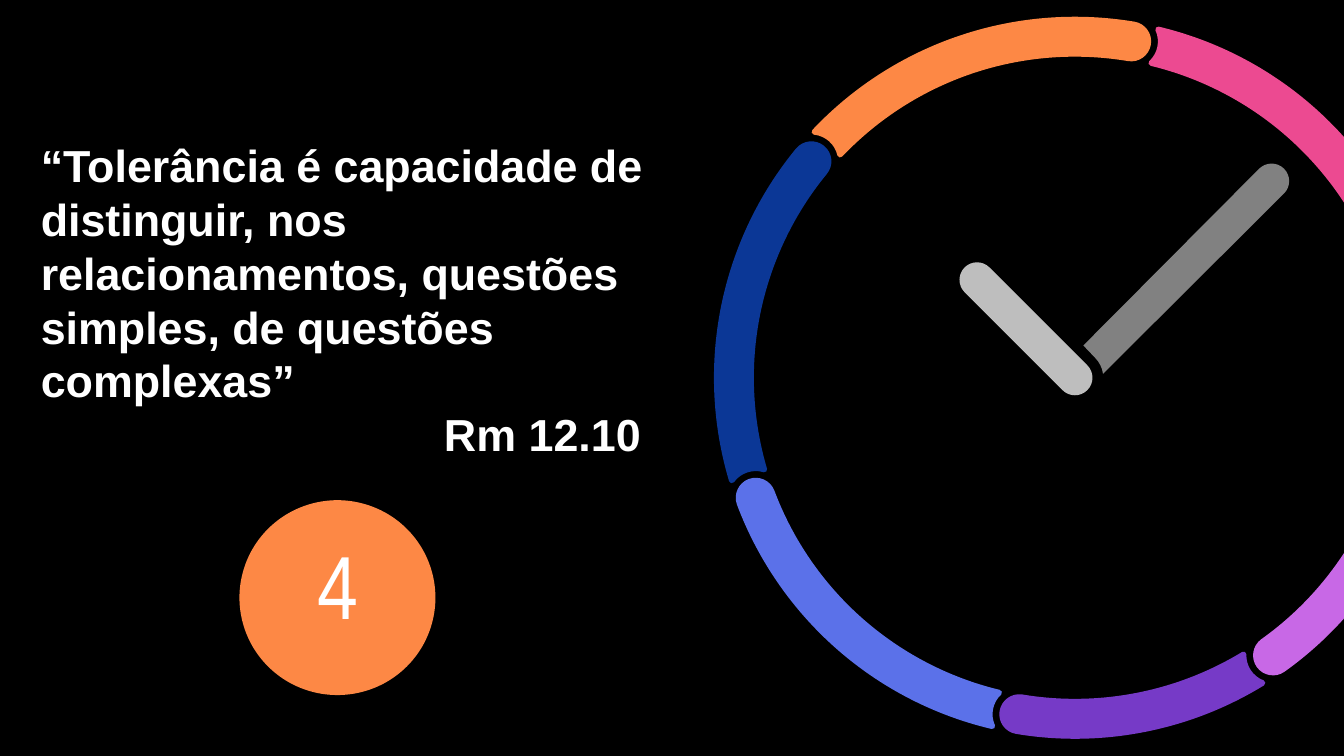
from dataclasses import dataclass
from math import acos, atan2, cos, degrees, hypot, radians, sin, tan

from lxml.etree import SubElement
from pptx import Presentation
from pptx.dml.color import RGBColor
from pptx.enum.shapes import MSO_SHAPE as Shape
from pptx.enum.text import MSO_ANCHOR as Anchor, PP_ALIGN as Align
from pptx.oxml.ns import qn
from pptx.util import Pt


@dataclass(frozen=True)
class Theme:
    background: str = "000000"
    text: str = "FFFFFF"
    accent: str = "FD8845"
    minute_hand: str = "818181"
    hour_hand: str = "BEBEBE"
    font: str = "Arial"
    narrow_font: str = "Arial Narrow"
    quote_size: float = 24
    number_size: float = 48


THEME = Theme()

# Each segment runs clockwise from the cap of the one before it to its own cap.
# Angles are in degrees, clockwise from three o'clock.
SEGMENTS = [
    ("0B3796", 219.4),
    (THEME.accent, 279.5),
    ("EC4A91", 370.9),
    ("C868E6", 414.5),
    ("763AC7", 459.4),
    ("5B71E9", 519.4),
]
TILT = 9.5


def rgb(code):
    return RGBColor.from_string(code)


def on_circle(center, radius, angle):
    turn = radians(angle)
    return center[0] + radius * cos(turn), center[1] + radius * sin(turn)


def arc(center, radius, start, end, pieces=2):
    """Bézier curves along a circle, each a tuple of four points."""
    step = (end - start) / pieces
    reach = hypot(radius, radius * 4 / 3 * tan(radians(step / 4)))
    lean = degrees(atan2(4 / 3 * tan(radians(step / 4)), 1))
    angles = [start + step * i for i in range(pieces)]
    return [(on_circle(center, radius, a),
             on_circle(center, reach, a + lean),
             on_circle(center, reach, a + step - lean),
             on_circle(center, radius, a + step)) for a in angles]


def along(curve, t):
    weights = ((1 - t)**3, 3 * t * (1 - t)**2, 3 * t * t * (1 - t), t**3)
    return [sum(w * point[axis] for w, point in zip(weights, curve)) for axis in (0, 1)]


def add_outline(page, curves, color, line_width=0):
    """A closed shape from curves, with straight lines across any gaps."""
    xs, ys = zip(*(along(curve, i / 16) for curve in curves for i in range(17)))
    left, right, top, bottom = min(xs), max(xs), min(ys), max(ys)
    builder = page.shapes.build_freeform(Pt(left), Pt(top))
    builder.add_line_segments([(Pt(right), Pt(top)), (Pt(right), Pt(bottom)),
                               (Pt(left), Pt(bottom))])
    shape = builder.convert_to_shape()
    track = next(shape._element.iter(qn("a:path")))
    for child in list(track):
        track.remove(child)

    def command(tag, *points):
        node = SubElement(track, qn(tag))
        for x, y in points:
            SubElement(node, qn("a:pt"), x=str(Pt(x - left)), y=str(Pt(y - top)))

    pen = curves[0][0]
    command("a:moveTo", pen)
    for start, *rest in curves:
        if hypot(start[0] - pen[0], start[1] - pen[1]) > 0.1:
            command("a:lnTo", start)
        command("a:cubicBezTo", *rest)
        pen = rest[-1]
    command("a:close")
    paint(shape, color, line_width)
    return shape


def paint(shape, color, line_width=0):
    shape.shadow.inherit = False
    shape.fill.solid()
    shape.fill.fore_color.rgb = rgb(color)
    if line_width:
        shape.line.color.rgb = rgb(color)
        shape.line.width = Pt(line_width)
    else:
        shape.line.fill.background()


def add_text(frame, *lines, size, font, bold=False, align=Align.LEFT,
             spacing=None, tab=0):
    """Fill the first paragraph, with a line break between the lines."""
    para = frame.paragraphs[0]
    if tab:
        stops = SubElement(para._p.get_or_add_pPr(), qn("a:tabLst"))
        SubElement(stops, qn("a:tab"), pos=str(Pt(tab)), algn="l")
    para.alignment = align
    if spacing:
        para.line_spacing = Pt(spacing)
    for number, line in enumerate(lines):
        if number:
            para.add_line_break()
        span = para.add_run()
        span.text = line
        span.font.size = Pt(size)
        span.font.name = font
        span.font.bold = bold
        span.font.color.rgb = rgb(THEME.text)


def set_frame(frame, inset):
    frame.word_wrap = True
    frame.vertical_anchor = Anchor.MIDDLE
    frame.margin_left = frame.margin_right = Pt(inset)
    frame.margin_top = frame.margin_bottom = Pt(inset)


def add_quote(page, left, top, width, height):
    box = page.shapes.add_textbox(Pt(left), Pt(top), Pt(width), Pt(height))
    set_frame(box.text_frame, 7.2)
    add_text(box.text_frame, "“Tolerância é capacidade de distinguir, nos "
             "relacionamentos, questões simples, de questões complexas”",
             "\tRm 12.10", size=THEME.quote_size, font=THEME.font, bold=True,
             spacing=28.8, tab=216)


def add_number(page, left, top, width, height):
    disc = page.shapes.add_shape(Shape.OVAL, Pt(left), Pt(top), Pt(width), Pt(height))
    paint(disc, THEME.accent)
    set_frame(disc.text_frame, 0)
    disc.text_frame.margin_bottom = Pt(15.2)
    add_text(disc.text_frame, "4", size=THEME.number_size,
             font=THEME.narrow_font, align=Align.CENTER)


def segment_curves(center, outer, inner, start, end):
    """A band with a notch around the cap at start and a round cap at end."""
    middle, cap, notch = (outer + inner) / 2, (outer - inner) / 2, 15.8

    def notch_corner(radius):
        """Ring angle of the corner, and its direction from the notch's center."""
        swing = acos((radius**2 + middle**2 - notch**2) / (2 * radius * middle))
        way = atan2(radius * sin(swing), radius * cos(swing) - middle)
        return start + degrees(swing), start + degrees(way)

    outer_angle, outer_way = notch_corner(outer)
    inner_angle, inner_way = notch_corner(inner)
    return (arc(center, outer, outer_angle, end)
            + arc(on_circle(center, middle, end), cap, end, end + 180)
            + arc(center, inner, end, inner_angle)
            + arc(on_circle(center, middle, start), notch, inner_way, outer_way))


def add_ring(page, center, outer, inner):
    """Draw each segment level, then turn it and carry it round the center."""
    start = SEGMENTS[-1][1] - 360
    for color, end in SEGMENTS:
        curves = segment_curves(center, outer, inner, start - TILT, end - TILT)
        shape = add_outline(page, curves, color, 3)
        dx = shape.left + shape.width / 2 - Pt(center[0])
        dy = shape.top + shape.height / 2 - Pt(center[1])
        angle = degrees(atan2(dy, dx))
        x, y = on_circle((0, 0), hypot(dx, dy), angle + TILT)
        shape.left += round(x - dx)
        shape.top += round(y - dy)
        shape.rotation = TILT
        start = end


def add_hands(page, center, minute_length, hour_length, half_width):
    tip = on_circle(center, minute_length, -45)
    heel = (center[0] + 4.5, center[1] - 17.3)
    minute = (arc(tip, half_width, -135, 45) + arc(center, 15.2, -8, -45, 1)
              + [(heel,) * 4])
    add_outline(page, minute, THEME.minute_hand)
    tip = on_circle(center, hour_length, -135)
    hour = arc(tip, half_width, 135, 315) + arc(center, half_width, -45, 135)
    add_outline(page, hour, THEME.hour_hand)


def add_clock(page, left, top, size):
    center = (left + size / 2, top + size / 2)
    add_ring(page, center, size / 2, size / 2 - 18.4)
    add_hands(page, center, 149, 74.2, 9.4)


def main():
    deck = Presentation()
    deck.slide_width, deck.slide_height = Pt(720), Pt(405)
    page = deck.slides.add_slide(deck.slide_layouts[6])
    page.background.fill.solid()
    page.background.fill.fore_color.rgb = rgb(THEME.background)
    add_quote(page, 14.8, 65.3, 357.8, 190)
    add_clock(page, 384, 10.5, 383.8)
    add_number(page, 128.3, 268, 105, 104.4)
    deck.save("out.pptx")


if __name__ == "__main__":
    main()
